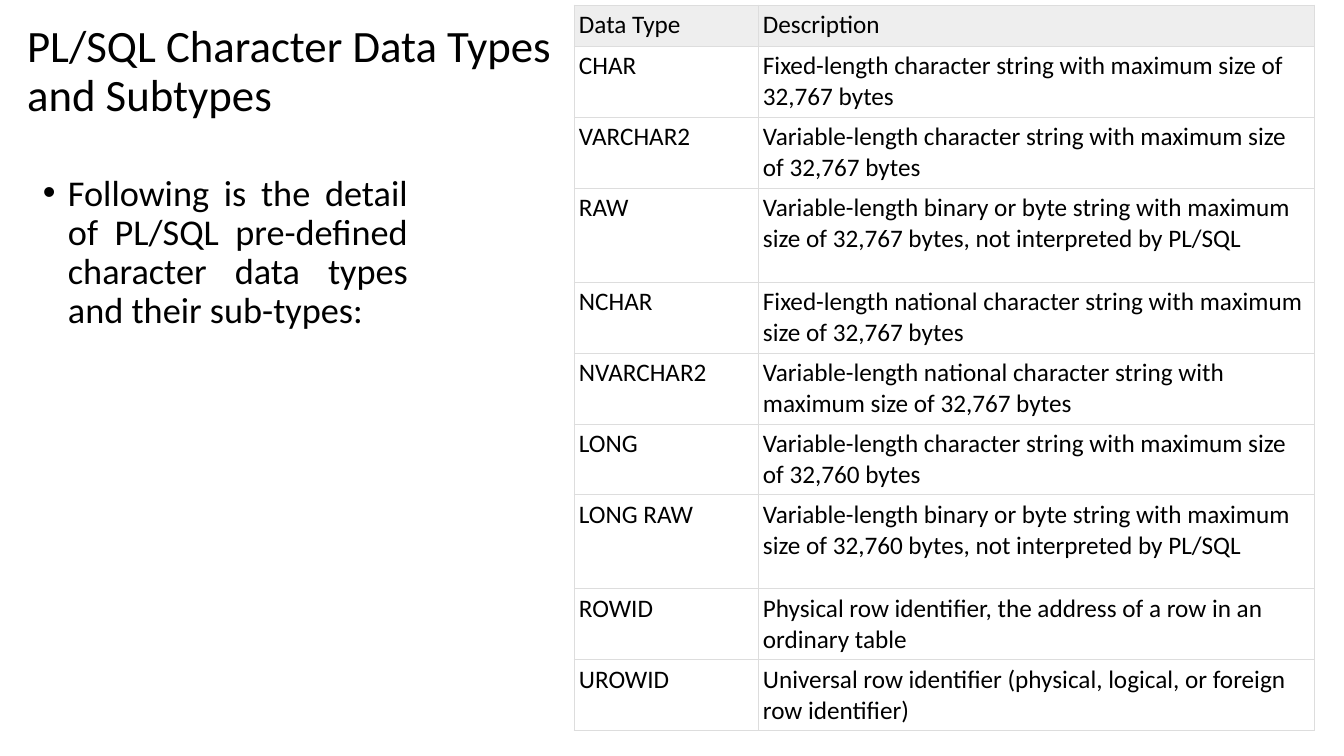
import pptx
import pptx.dml.color
import pptx.enum.text
import pptx.oxml
import pptx.oxml.ns
import pptx.util

PX = 914400 / 100.8
FONT = "Calibri"
COLORS = {"text": "000000", "head": "EEEEEE", "rule": "DDDDDD"}
TITLE = "PL/SQL Character Data Types and Subtypes"
INTRO = ("Following is the detail of PL/SQL pre-defined character data types "
         "and their sub-types:")
COLS = [184, 557]
ROWS = [
    (41, "Data Type", "Description"),
    (71, "CHAR", "Fixed-length character string with maximum size of 32,767 bytes"),
    (71, "VARCHAR2", "Variable-length character string with maximum size of 32,767 bytes"),
    (94, "RAW", "Variable-length binary or byte string with maximum size of "
                "32,767 bytes, not interpreted by PL/SQL"),
    (71, "NCHAR", "Fixed-length national character string with maximum size of 32,767 bytes"),
    (71, "NVARCHAR2", "Variable-length national character string with maximum size "
                      "of 32,767 bytes"),
    (71, "LONG", "Variable-length character string with maximum size of 32,760 bytes"),
    (94, "LONG RAW", "Variable-length binary or byte string with maximum size of "
                     "32,760 bytes, not interpreted by PL/SQL"),
    (71, "ROWID", "Physical row identifier, the address of a row in an ordinary table"),
    (71, "UROWID", "Universal row identifier (physical, logical, or foreign row identifier)"),
]


def px(n):
    return pptx.util.Emu(round(n * PX))


def color(name):
    return pptx.dml.color.RGBColor.from_string(COLORS[name])


def add_run(para, text, size):
    run = para.add_run()
    run.text = text
    run.font.name = FONT
    run.font.size = pptx.util.Pt(size)
    run.font.bold = False
    run.font.color.rgb = color("text")


def add_title(slide):
    title = slide.shapes.title
    title.left, title.top, title.width, title.height = map(px, (17, 24, 596, 146))
    frame = title.text_frame
    frame.word_wrap = True
    frame.auto_size = pptx.enum.text.MSO_AUTO_SIZE.NONE
    frame.vertical_anchor = pptx.enum.text.MSO_ANCHOR.TOP
    frame.margin_top = 0
    para = frame.paragraphs[0]
    para.alignment = pptx.enum.text.PP_ALIGN.LEFT
    para.line_spacing = 0.9
    add_run(para, TITLE, 32)


def add_bullet(para, indent):
    props = para._p.get_or_add_pPr()
    props.set("marL", str(px(indent)))
    props.set("indent", str(-px(indent)))
    ns = pptx.oxml.ns.nsdecls("a")
    props.append(pptx.oxml.parse_xml(f'<a:buFont {ns} typeface="Arial"/>'))
    props.append(pptx.oxml.parse_xml(f'<a:buChar {ns} char="•"/>'))


def add_intro(slide):
    box = slide.shapes.add_textbox(*map(px, (33, 170, 385, 175)))
    box.text_frame.word_wrap = True
    para = box.text_frame.paragraphs[0]
    para.alignment = pptx.enum.text.PP_ALIGN.JUSTIFY
    para.line_spacing = 0.9
    para.space_before = pptx.util.Pt(10)
    add_bullet(para, 25)
    add_run(para, INTRO, 25.9)


def add_rules(cell):
    """Draw a thin line on all four sides of a cell."""
    props = cell._tc.get_or_add_tcPr()
    ns = pptx.oxml.ns.nsdecls("a")
    for side in "LRTB":
        props.append(pptx.oxml.parse_xml(
            f'<a:ln{side} {ns} w="{pptx.util.Pt(0.75)}"><a:solidFill>'
            f'<a:srgbClr val="{COLORS["rule"]}"/></a:solidFill></a:ln{side}>'))


def fill_cell(cell, text, head):
    cell.margin_left = cell.margin_right = px(5)
    cell.margin_top = cell.margin_bottom = px(5)
    add_rules(cell)
    if head:
        cell.fill.solid()
        cell.fill.fore_color.rgb = color("head")
    else:
        cell.fill.background()
    add_run(cell.text_frame.paragraphs[0], text, 18)


def add_types(slide):
    high = sum(row[0] for row in ROWS)
    frame = slide.shapes.add_table(len(ROWS), len(COLS), px(574), px(5),
                                   px(sum(COLS)), px(high))
    table = frame.table
    table.first_row = table.horz_banding = False
    for col, width in zip(table.columns, COLS):
        col.width = px(width)
    for r, (height, *texts) in enumerate(ROWS):
        table.rows[r].height = px(height)
        for c, text in enumerate(texts):
            fill_cell(table.cell(r, c), text, r == 0)


def main():
    deck = pptx.Presentation()
    deck.slide_width, deck.slide_height = px(1344), px(756)
    slide = deck.slides.add_slide(deck.slide_layouts[5])
    add_title(slide)
    add_intro(slide)
    add_types(slide)
    deck.save("out.pptx")


if __name__ == "__main__":
    main()
